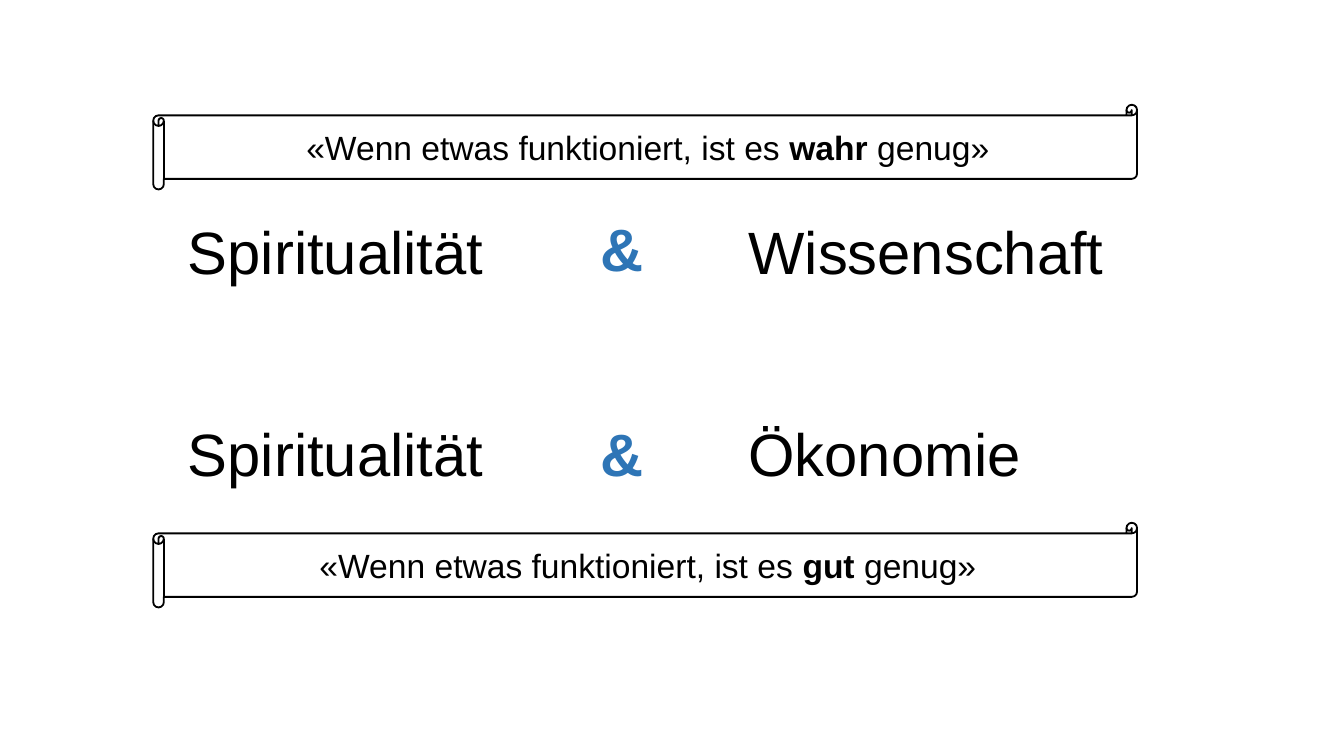
import pptx
import pptx.util
import pptx.dml.color
import pptx.enum.shapes
import pptx.enum.text

Inches = pptx.util.Inches

COLORS = {"text": "000000", "ampersand": "2E75B6"}
FONT = "Arial"

PAIRS = [
    {"top": 1.55, "ampersand_top": 1.53, "words": ("Spiritualität", "Wissenschaft")},
    {"top": 3.05, "ampersand_top": 3.05, "words": ("Spiritualität", "Ökonomie")},
]
BANNERS = [(0.78, "wahr"), (3.89, "gut")]
QUOTE_START, QUOTE_END = "«Wenn etwas funktioniert, ist es ", " genug»"

SLIDE_WIDTH = 10
SLIDE_HEIGHT = SLIDE_WIDTH * 9 / 16
WORD_LEFTS = (1.3, 5.47)
WORD_WIDTH = 2.99
AMPERSAND_LEFT, AMPERSAND_WIDTH = 4.37, 0.87
LINE_HEIGHT = 0.64
BANNER_LEFT, BANNER_WIDTH, BANNER_HEIGHT = 1.14, 7.32, 0.63


def rgb(name):
    return pptx.dml.color.RGBColor.from_string(COLORS[name])


def format_run(run, size, color="text", bold=False):
    run.font.name = FONT
    run.font.size = pptx.util.Pt(size)
    run.font.bold = bold
    run.font.color.rgb = rgb(color)


def add_word(slide, text, left, top, width, color="text", bold=False):
    box = slide.shapes.add_textbox(
        Inches(left), Inches(top), Inches(width), Inches(LINE_HEIGHT))
    text_frame = box.text_frame
    text_frame.word_wrap = True
    text_frame.auto_size = pptx.enum.text.MSO_AUTO_SIZE.SHAPE_TO_FIT_TEXT
    text_frame.text = text
    format_run(text_frame.paragraphs[0].runs[0], 32, color, bold)


def add_banner(slide, top, emphasis):
    shape = slide.shapes.add_shape(
        pptx.enum.shapes.MSO_SHAPE.HORIZONTAL_SCROLL, Inches(BANNER_LEFT),
        Inches(top), Inches(BANNER_WIDTH), Inches(BANNER_HEIGHT))
    shape.shadow.inherit = False
    shape.fill.background()
    shape.line.color.rgb = rgb("text")
    shape.line.width = pptx.util.Pt(1)
    shape.text_frame.vertical_anchor = pptx.enum.text.MSO_ANCHOR.MIDDLE
    paragraph = shape.text_frame.paragraphs[0]
    paragraph.alignment = pptx.enum.text.PP_ALIGN.CENTER
    for text in (QUOTE_START, emphasis, QUOTE_END):
        run = paragraph.add_run()
        run.text = text
        format_run(run, 18, bold=text == emphasis)


def main():
    presentation = pptx.Presentation()
    presentation.slide_width = Inches(SLIDE_WIDTH)
    presentation.slide_height = Inches(SLIDE_HEIGHT)
    slide = presentation.slides.add_slide(presentation.slide_layouts[6])
    for pair in PAIRS:
        for word, left in zip(pair["words"], WORD_LEFTS):
            add_word(slide, word, left, pair["top"], WORD_WIDTH)
        add_word(slide, "&", AMPERSAND_LEFT, pair["ampersand_top"],
                 AMPERSAND_WIDTH, "ampersand", True)
    for top, emphasis in BANNERS:
        add_banner(slide, top, emphasis)
    presentation.save("out.pptx")


if __name__ == "__main__":
    main()
